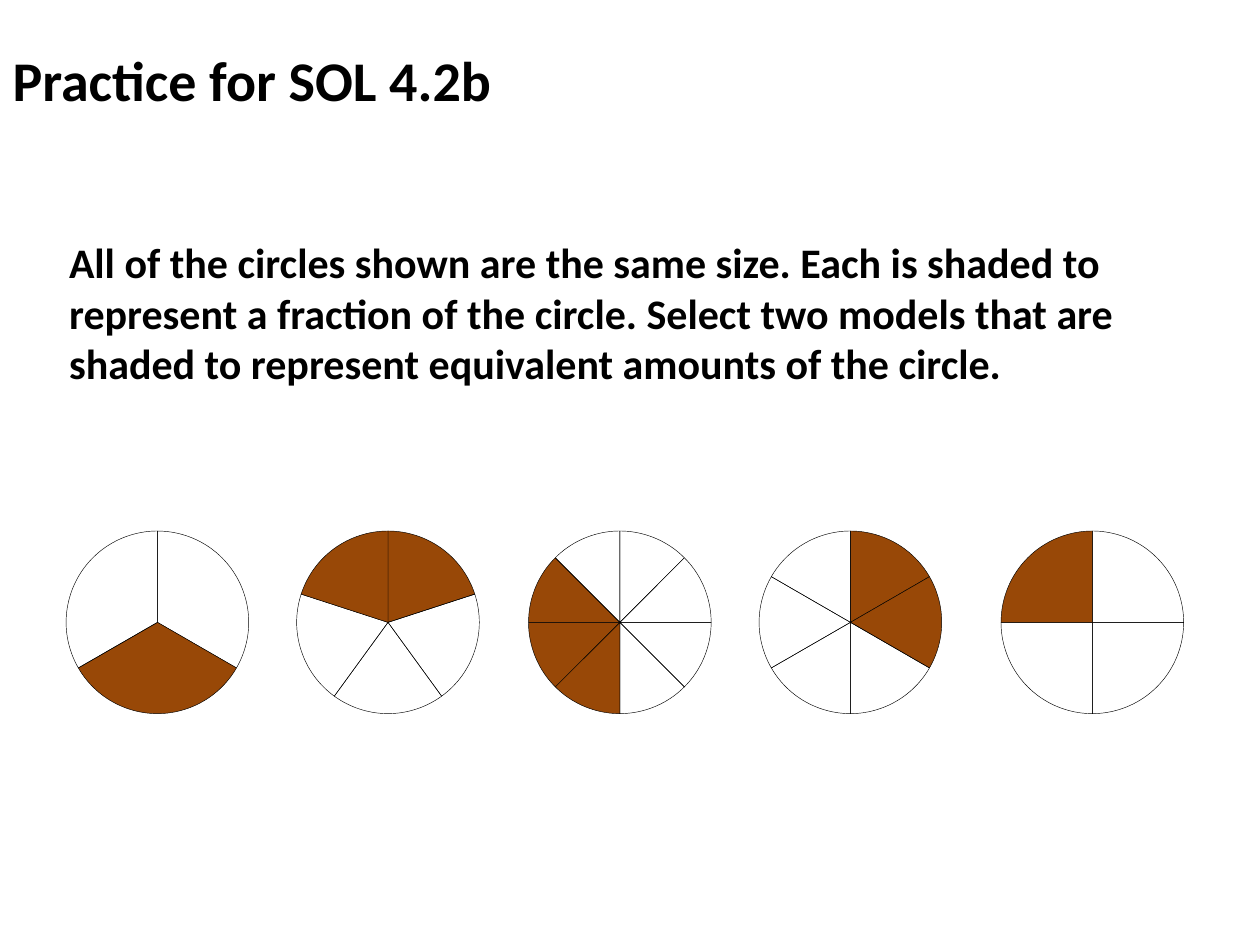
"""Build a practice slide with five pie models of shaded fractions."""
import pptx
import pptx.chart.data
import pptx.dml.color
import pptx.enum.chart
import pptx.enum.text
import pptx.oxml
import pptx.oxml.ns
import pptx.util

Inches, Pt = pptx.util.Inches, pptx.util.Pt
COLORS = {"text": "000000", "line": "000000", "shade": "984807", "bg": "FFFFFF"}
PIE_W, PIE_H, PIE_TOP, DIAMETER = 2, 1.72, 4.08, 1.45
PIES = [
    (0.25, 33, 3, {1}),
    (2.08, 20, 5, {0, 4}),
    (3.92, 12, 8, {4, 5, 6}),
    (5.75, 17, 6, {0, 1}),
    (7.67, 25, 4, {3}),
]


def rgb(name):
    return pptx.dml.color.RGBColor.from_string(COLORS[name])


def add_text(tf, text, size):
    p = tf.paragraphs[0]
    p.alignment = pptx.enum.text.PP_ALIGN.LEFT
    r = p.add_run()
    r.text = text
    r.font.name = "Calibri"
    r.font.size = Pt(size)
    r.font.bold = True
    r.font.color.rgb = rgb("text")


prs = pptx.Presentation()
prs.slide_width, prs.slide_height = Inches(10), Inches(7.5)
slide = prs.slides.add_slide(prs.slide_layouts[5])
slide.background.fill.solid()
slide.background.fill.fore_color.rgb = rgb("bg")

title = slide.shapes.title
title.left, title.top = Inches(0), Inches(0)
title.width, title.height = Inches(9), Inches(1.25)
title.text_frame.vertical_anchor = pptx.enum.text.MSO_ANCHOR.MIDDLE
add_text(title.text_frame, "Practice for SOL 4.2b", 32)

sp = slide.shapes.add_textbox(Inches(0.45), Inches(1.33), Inches(9), Inches(4.95))
tf = sp.text_frame
tf.word_wrap = True
tf.margin_top = Inches(0.55)
add_text(
    tf,
    "All of the circles shown are the same size. Each is shaded to represent "
    "a fraction of the circle. Select two models that are shaded to represent "
    "equivalent amounts of the circle.",
    24,
)

for left, value, count, shaded in PIES:
    data = pptx.chart.data.CategoryChartData()
    data.categories = [str(i + 1) for i in range(count)]
    data.add_series("Series 1", [value] * count)
    chart = slide.shapes.add_chart(
        pptx.enum.chart.XL_CHART_TYPE.PIE,
        Inches(left), Inches(PIE_TOP), Inches(PIE_W), Inches(PIE_H), data,
    ).chart
    chart.has_legend = False
    chart.has_title = False
    chart.font.name = "Calibri"
    chart.font.size = Pt(18)
    chart.font.color.rgb = rgb("text")
    plot = chart.plots[0]
    plot.vary_by_categories = False
    for i in range(count):
        fmt = plot.series[0].points[i].format
        if i in shaded:
            fmt.fill.solid()
            fmt.fill.fore_color.rgb = rgb("shade")
        else:
            fmt.fill.background()
        fmt.line.color.rgb = rgb("line")
        fmt.line.width = Pt(0.25)

    w, h = DIAMETER / PIE_W, DIAMETER / PIE_H
    layout = pptx.oxml.parse_xml(
        f'<c:layout {pptx.oxml.ns.nsdecls("c")}><c:manualLayout>'
        '<c:layoutTarget val="inner"/><c:xMode val="edge"/><c:yMode val="edge"/>'
        f'<c:x val="{(1 - w) / 2:.4f}"/><c:y val="{(1 - h) / 2:.4f}"/>'
        f'<c:w val="{w:.4f}"/><c:h val="{h:.4f}"/>'
        "</c:manualLayout></c:layout>"
    )
    area = chart.element.find(".//" + pptx.oxml.ns.qn("c:plotArea"))
    for old in area.findall(pptx.oxml.ns.qn("c:layout")):
        area.remove(old)
    area.insert(0, layout)

prs.save("out.pptx")
